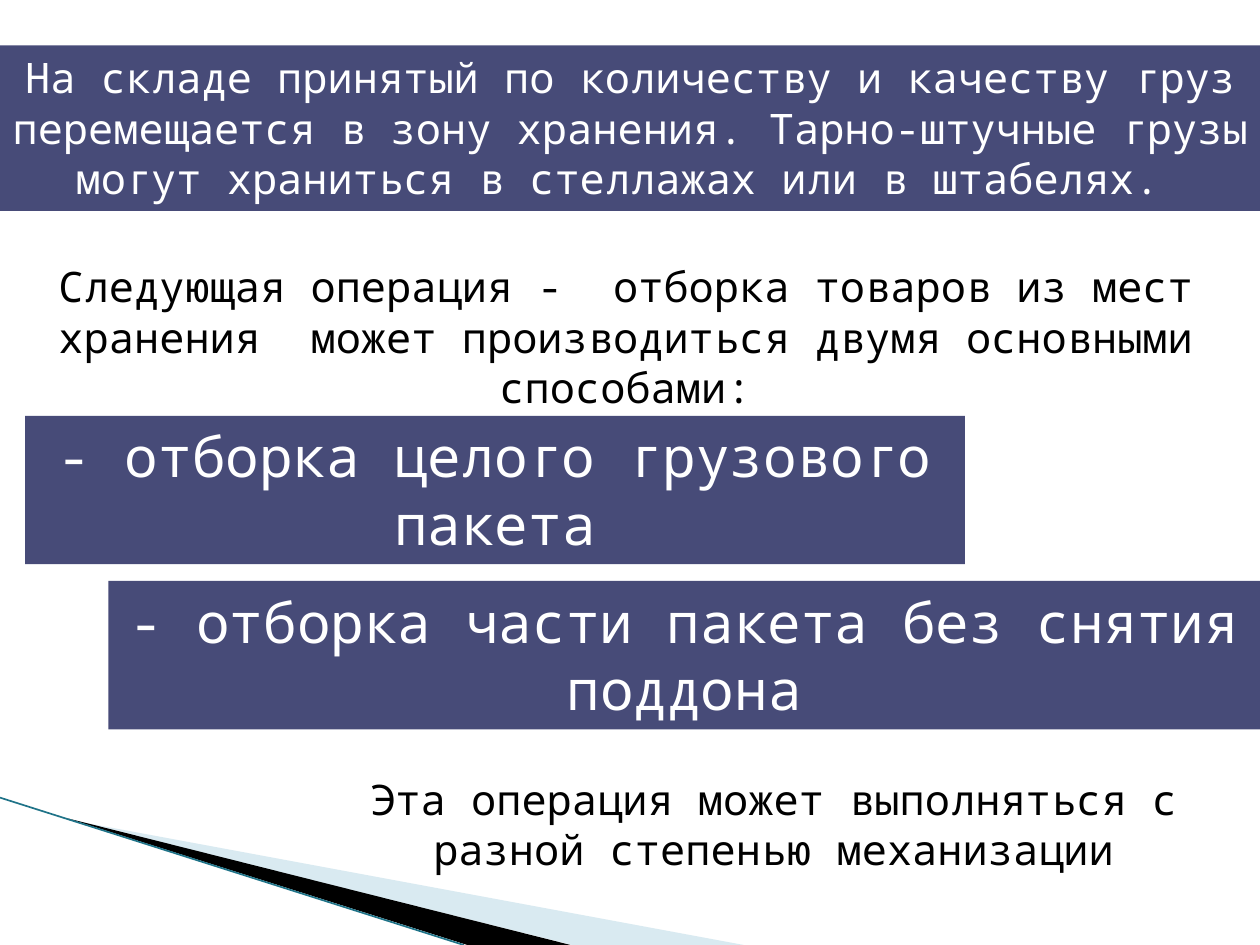
from dataclasses import dataclass

from lxml import etree
from pptx import Presentation
from pptx import util as u
from pptx.dml.color import RGBColor
from pptx.enum import shapes, text
from pptx.oxml.ns import qn


@dataclass(frozen=True)
class Theme:
    font: str = "Noto Sans Mono"
    body: int = 24
    large: int = 32
    band: str = "474B78"
    light: str = "FFFFFF"
    dark: str = "000000"
    pale: str = "A0CBDC"
    edge: str = "1F7388"


def write(sp, content, *, size, color, font, inset=7):
    tf = sp.text_frame
    tf.word_wrap = True
    tf.margin_left = tf.margin_right = u.Pt(inset)
    tf.margin_top = tf.margin_bottom = u.Pt(3.6)
    p = tf.paragraphs[0]
    p.alignment = text.PP_ALIGN.CENTER
    r = p.add_run()
    r.text = content
    r.font.name = font
    r.font.size = u.Pt(size)
    r.font.color.rgb = RGBColor.from_string(color)


class SlideBuilder:
    def __init__(self, slide, theme):
        self.s = slide
        self.theme = theme

    def fill(self, sp, color, alpha=None):
        sp.shadow.inherit = False
        sp.fill.solid()
        sp.fill.fore_color.rgb = RGBColor.from_string(color)
        sp.line.fill.background()
        if alpha is not None:
            clr = sp.fill._xPr.find(qn("a:solidFill"))[0]
            etree.SubElement(clr, qn("a:alpha")).set("val", str(alpha * 1000))

    def wedge(self, points, color, alpha=None):
        pts = [(u.Pt(x), u.Pt(y)) for x, y in points]
        builder = self.s.shapes.build_freeform(*pts[0])
        builder.add_line_segments(pts[1:], close=True)
        self.fill(builder.convert_to_shape(), color, alpha)

    def line(self, start, end, color, width):
        ends = [u.Pt(v) for v in (*start, *end)]
        c = self.s.shapes.add_connector(shapes.MSO_CONNECTOR.STRAIGHT, *ends)
        c.line.color.rgb = RGBColor.from_string(color)
        c.line.width = u.Pt(width)
        etree.SubElement(c._element.spPr, qn("a:effectLst"))

    def band(self, box, content, size):
        sp = self.s.shapes.add_shape(shapes.MSO_SHAPE.RECTANGLE,
                                     *(u.Pt(v) for v in box))
        self.fill(sp, self.theme.band)
        sp.text_frame.vertical_anchor = text.MSO_ANCHOR.TOP
        write(sp, content, size=size, color=self.theme.light,
              font=self.theme.font)

    def note(self, box, content):
        sp = self.s.shapes.add_textbox(*(u.Pt(v) for v in box))
        write(sp, content, size=self.theme.body, color=self.theme.dark,
              font=self.theme.font)


def main():
    prs = Presentation()
    prs.slide_width, prs.slide_height = u.Pt(720), u.Pt(540)
    theme = Theme()
    b = SlideBuilder(prs.slides.add_slide(prs.slide_layouts[6]), theme)

    b.wedge([(39.5, 468.5), (425, 540), (327, 540)], theme.pale, alpha=40)
    b.wedge([(38, 467.5), (326, 540), (267, 540)], theme.dark)
    b.line((0, 455.8), (265, 540), theme.edge, 0.95)

    b.band((0, 26, 720, 94.5),
           "На складе принятый по количеству и качеству груз перемещается "
           "в зону хранения. Тарно-штучные грузы могут храниться "
           "в стеллажах или в штабелях. ", theme.body)
    b.note((14.4, 145.5, 686, 94.5),
           "Следующая операция -  отборка товаров из мест хранения  может "
           "производиться двумя основными способами:")
    b.band((14.4, 237.6, 537, 84.8),
           "- отборка целого грузового пакета", theme.large)
    b.band((62, 332, 658, 84.8),
           "- отборка части пакета без снятия поддона", theme.large)
    b.note((191.5, 438.5, 501, 65.5),
           "Эта операция может выполняться с разной степенью механизации")

    prs.save("out.pptx")


if __name__ == "__main__":
    main()
